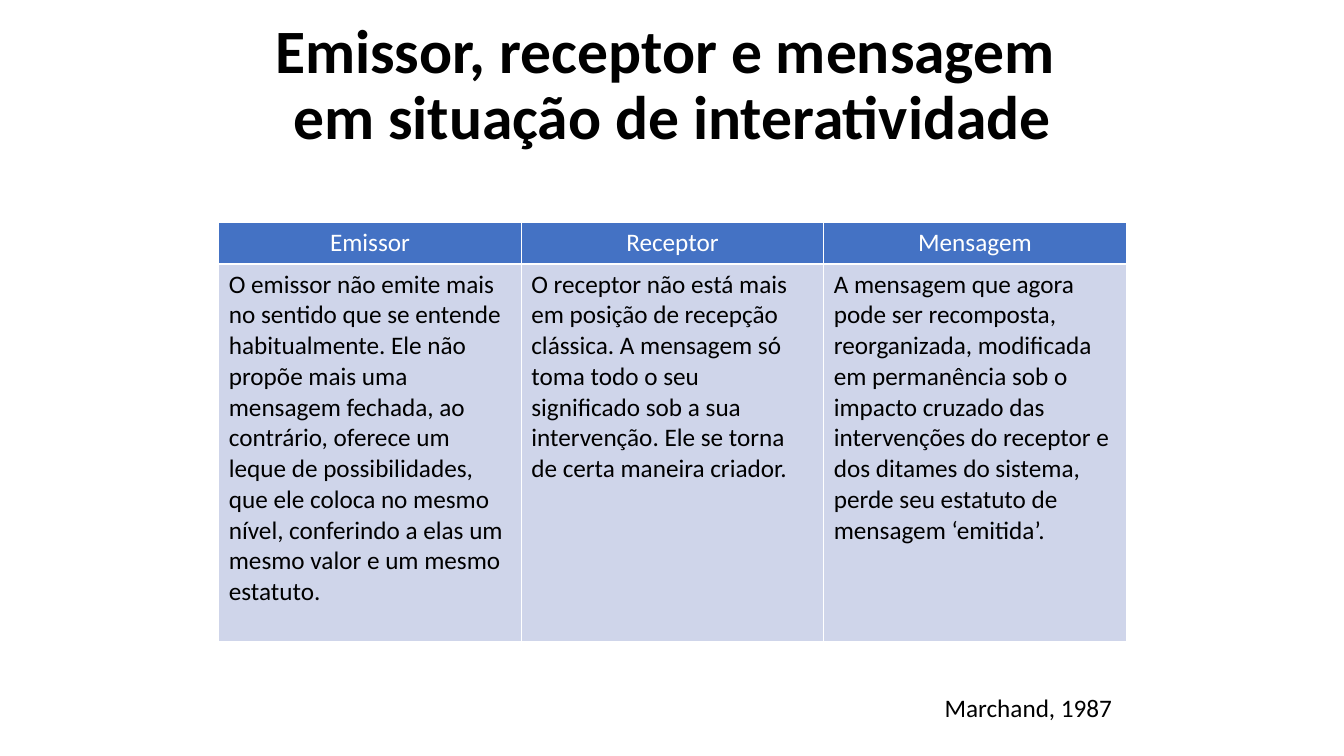
from lxml.etree import SubElement
from pptx import Presentation
from pptx.dml.color import RGBColor
from pptx.enum.text import MSO_ANCHOR, PP_ALIGN
from pptx.oxml.ns import qn
from pptx.util import Inches, Pt

BLACK, WHITE = "000000", "FFFFFF"
HEADER_FILL, BODY_FILL = "4472C4", "CFD5EA"
COLUMNS = {
    "Emissor": "O emissor não emite mais no sentido que se entende habitualmente. "
               "Ele não propõe mais uma mensagem fechada, ao contrário, oferece um "
               "leque de possibilidades, que ele coloca no mesmo nível, conferindo a "
               "elas um mesmo valor e um mesmo estatuto.",
    "Receptor": "O receptor não está mais em posição de recepção clássica. A mensagem "
                "só toma todo o seu significado sob a sua intervenção. Ele se torna de "
                "certa maneira criador.",
    "Mensagem": "A mensagem que agora pode ser recomposta, reorganizada, modificada em "
                "permanência sob o impacto cruzado das intervenções do receptor e dos "
                "ditames do sistema, perde seu estatuto de mensagem ‘emitida’.",
}


def color(value):
    return RGBColor.from_string(value)


def write(frame, text, size=18, fill=BLACK, bold=False, align=PP_ALIGN.LEFT, spacing=None):
    """Fill a text frame with one paragraph; a newline becomes a line break."""
    para = frame.paragraphs[0]
    para.text = text
    para.alignment = align
    para.line_spacing = spacing
    for span in para.runs:
        span.font.name = "Calibri"
        span.font.size = Pt(size)
        span.font.bold = bold
        span.font.color.rgb = color(fill)


def add_text(page, left, top, width, height, text, wrap=True,
             anchor=MSO_ANCHOR.TOP, **text_format):
    box = page.shapes.add_textbox(Inches(left), Inches(top), Inches(width), Inches(height))
    box.text_frame.word_wrap = wrap
    box.text_frame.vertical_anchor = anchor
    write(box.text_frame, text, **text_format)


def add_borders(cell):
    properties = cell._tc.get_or_add_tcPr()
    for side in ("lnL", "lnR", "lnT", "lnB"):
        line = SubElement(properties, qn(f"a:{side}"), w=str(Pt(1)))
        SubElement(SubElement(line, qn("a:solidFill")), qn("a:srgbClr"), val=WHITE)


def fill_cell(cell, text, background, **text_format):
    write(cell.text_frame, text, **text_format)
    add_borders(cell)
    cell.fill.solid()
    cell.fill.fore_color.rgb = color(background)


def add_comparison(page):
    heights = (0.41, 3.75)
    table = page.shapes.add_table(
        2, len(COLUMNS), Inches(2.17), Inches(2.21), Inches(9), Inches(sum(heights))).table
    for row, height in zip(table.rows, heights):
        row.height = Inches(height)
    for index, (heading, description) in enumerate(COLUMNS.items()):
        fill_cell(table.cell(0, index), heading, HEADER_FILL, fill=WHITE, align=PP_ALIGN.CENTER)
        fill_cell(table.cell(1, index), description, BODY_FILL)


def main():
    deck = Presentation()
    deck.slide_width, deck.slide_height = Inches(13.33), Inches(7.5)
    page = deck.slides.add_slide(deck.slide_layouts[6])
    add_text(page, 0.92, 0.02, 11.5, 1.68,
             "Emissor, receptor e mensagem \nem situação de interatividade",
             anchor=MSO_ANCHOR.MIDDLE, size=44, bold=True, align=PP_ALIGN.CENTER, spacing=0.9)
    add_comparison(page)
    add_text(page, 9.27, 6.82, 1.88, 0.4, "Marchand, 1987", wrap=False)
    deck.save("out.pptx")


if __name__ == "__main__":
    main()
